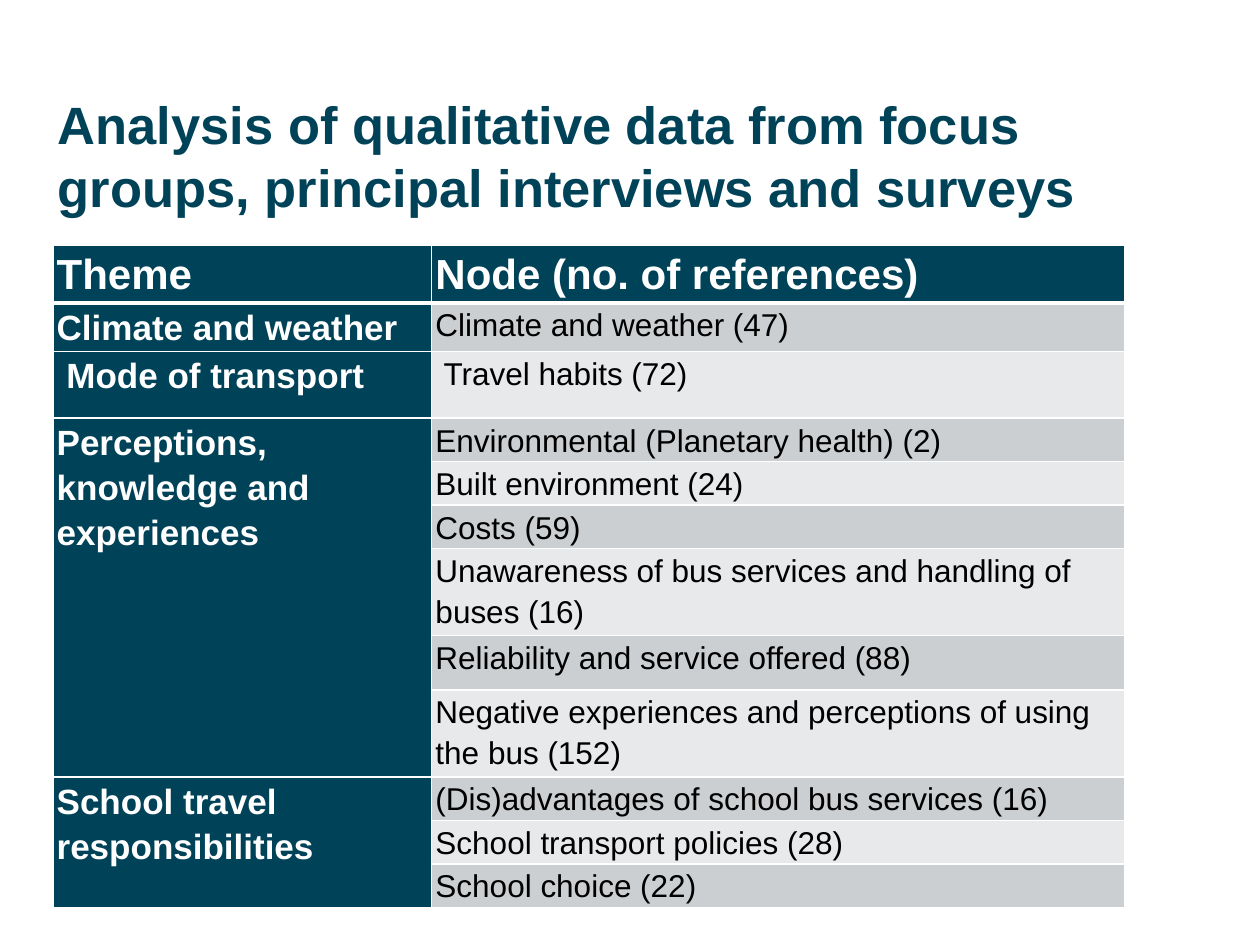
from lxml.etree import SubElement
from pptx import Presentation
from pptx.dml.color import RGBColor
from pptx.enum.text import MSO_ANCHOR
from pptx.oxml.ns import qn
from pptx.util import Pt

TEAL = RGBColor(0x00, 0x43, 0x59)
WHITE = RGBColor(0xFF, 0xFF, 0xFF)
BLACK = RGBColor(0x00, 0x00, 0x00)
DARK_BAND = RGBColor(0xCC, 0xCF, 0xD1)
LIGHT_BAND = RGBColor(0xE7, 0xE9, 0xEA)

ONE_LINE, TWO_LINES = 23, 46
HEADER_HEIGHT = 30
HEADINGS = ("Theme", "Node (no. of references)")
# Each theme with its nodes and their row heights
THEMES = [
    ("Climate and weather", [("Climate and weather (47)", 25.5)]),
    (" Mode of transport", [(" Travel habits (72)", 38.2)]),
    ("Perceptions, knowledge and experiences", [
        ("Environmental (Planetary health) (2)", ONE_LINE),
        ("Built environment (24)", ONE_LINE),
        ("Costs (59)", ONE_LINE),
        ("Unawareness of bus services and handling of buses (16)", TWO_LINES),
        ("Reliability and service offered (88)", 31),
        ("Negative experiences and perceptions of using the bus (152)", TWO_LINES),
    ]),
    ("School travel responsibilities", [
        ("(Dis)advantages of school bus services (16)", ONE_LINE),
        ("School transport policies (28)", ONE_LINE),
        ("School choice (22)", ONE_LINE),
    ]),
]


def write_text(frame, text, *, size, color, bold=False, spacing=1.15):
    frame.word_wrap = True
    paragraph = frame.paragraphs[0]
    paragraph.line_spacing = spacing
    run = paragraph.add_run()
    run.text = text
    run.font.name = "Arial"
    run.font.size = Pt(size)
    run.font.bold = bold
    run.font.color.rgb = color


def style_cell(cell, fill, bottom_width=1, top_width=1):
    """Set tight margins, white borders and a solid fill."""
    cell.margin_left = cell.margin_right = Pt(2.2)
    cell.margin_top = cell.margin_bottom = 0
    properties = cell._tc.get_or_add_tcPr()
    widths = {"a:lnL": 1, "a:lnR": 1, "a:lnT": top_width, "a:lnB": bottom_width}
    for side, width in widths.items():
        border = SubElement(properties, qn(side), w=str(Pt(width)))
        border_fill = SubElement(border, qn("a:solidFill"))
        SubElement(border_fill, qn("a:srgbClr"), val=str(WHITE))
    cell.fill.solid()
    cell.fill.fore_color.rgb = fill


def add_title(slide):
    title = slide.shapes.add_textbox(Pt(26), Pt(49), Pt(668), Pt(79))
    title.text_frame.vertical_anchor = MSO_ANCHOR.MIDDLE
    write_text(
        title.text_frame,
        "Analysis of qualitative data from focus groups, principal interviews and surveys",
        size=30, color=TEAL, bold=True, spacing=Pt(36),
    )


def add_theme_table(slide):
    nodes = [node for _, group in THEMES for node in group]
    heights = [HEADER_HEIGHT] + [height for _, height in nodes]
    table = slide.shapes.add_table(
        len(heights), 2, Pt(30.2), Pt(140), Pt(612.5), Pt(sum(heights))
    ).table
    table.columns[0].width, table.columns[1].width = Pt(216.5), Pt(396)
    for row, height in zip(table.rows, heights):
        row.height = Pt(height)

    for column, heading in enumerate(HEADINGS):
        cell = table.cell(0, column)
        style_cell(cell, TEAL, bottom_width=3)
        write_text(cell.text_frame, heading, size=24, color=WHITE, bold=True)

    for row, (node, _) in enumerate(nodes, start=1):
        top_width = 3 if row == 1 else 1
        theme_cell, node_cell = table.cell(row, 0), table.cell(row, 1)
        style_cell(theme_cell, TEAL, top_width=top_width)
        style_cell(node_cell, DARK_BAND if row % 2 else LIGHT_BAND, top_width=top_width)
        write_text(node_cell.text_frame, node, size=18, color=BLACK)

    first = 1
    for theme, group in THEMES:
        theme_cell = table.cell(first, 0)
        if len(group) > 1:
            theme_cell.merge(table.cell(first + len(group) - 1, 0))
        write_text(theme_cell.text_frame, theme, size=20, color=WHITE, bold=True)
        first += len(group)


def main():
    presentation = Presentation()
    presentation.slide_width, presentation.slide_height = Pt(720), Pt(540)
    slide = presentation.slides.add_slide(presentation.slide_layouts[6])
    add_title(slide)
    add_theme_table(slide)
    presentation.save("out.pptx")


if __name__ == "__main__":
    main()
